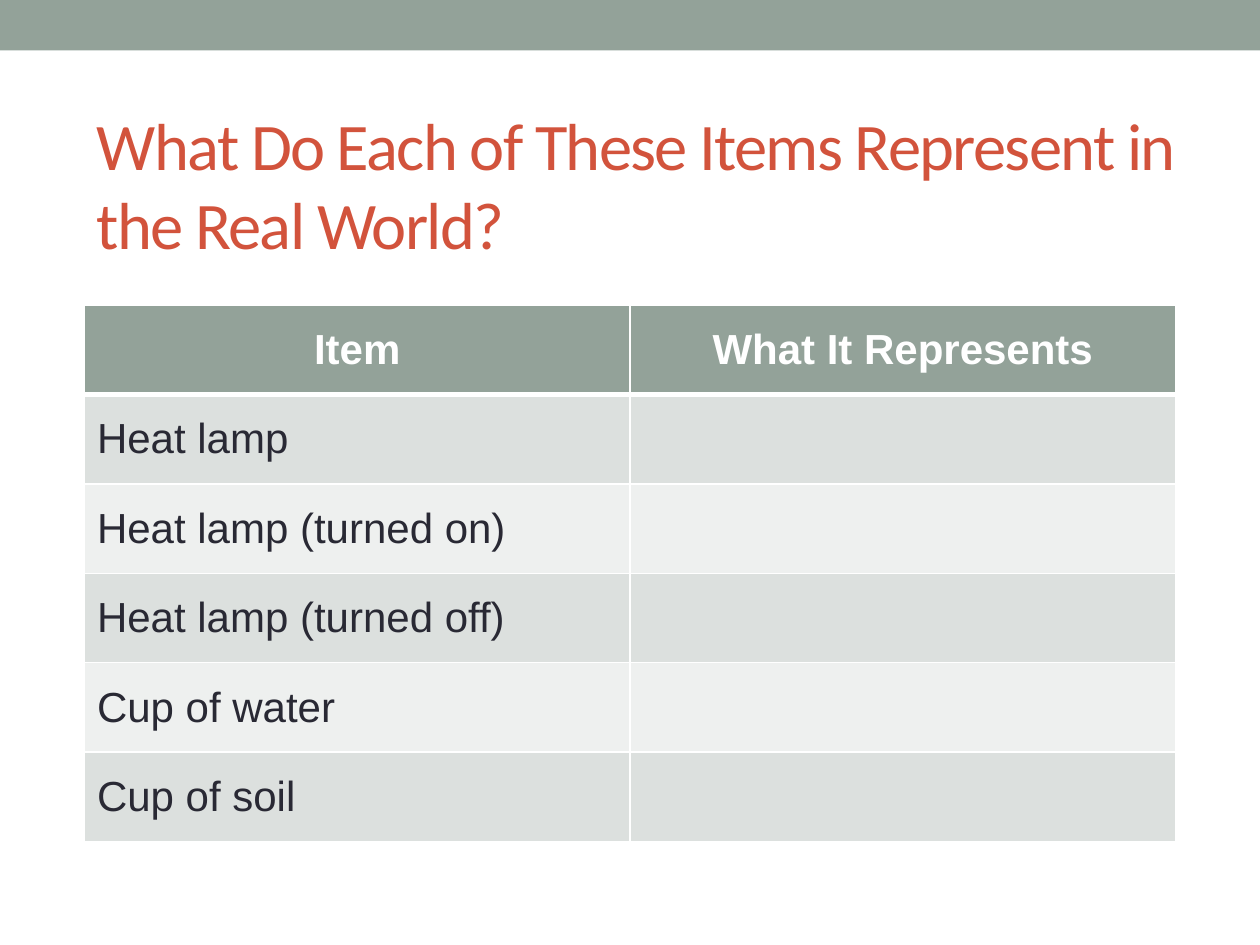
from lxml import etree
from pptx import Presentation
from pptx.dml.color import RGBColor
from pptx.enum.shapes import MSO_SHAPE
from pptx.enum.text import MSO_ANCHOR, PP_ALIGN
from pptx.oxml.ns import qn
from pptx.util import Inches, Pt

RECTANGLE = MSO_SHAPE.RECTANGLE
MIDDLE = MSO_ANCHOR.MIDDLE
LEFT, CENTER = PP_ALIGN.LEFT, PP_ALIGN.CENTER

SAGE, RUST, INK, WHITE = "93A299", "D2533C", "292934", "FFFFFF"
BANDS = ("DCE0DE", "EEF0EF")
MARGIN = 0.67
COLUMN_WIDTH, ROW_HEIGHT = 4.33, 0.71
ROWS = [
    ("Item", "What It Represents"),
    ("Heat lamp", ""),
    ("Heat lamp (turned on)", ""),
    ("Heat lamp (turned off)", ""),
    ("Cup of water", ""),
    ("Cup of soil", ""),
]


def color(hex_value):
    return RGBColor.from_string(hex_value)


def fill_solid(target, hex_value):
    target.fill.solid()
    target.fill.fore_color.rgb = color(hex_value)


def style_font(font, name, size, hex_value, bold=False):
    font.name = name
    font.size = Pt(size)
    font.bold = bold
    font.color.rgb = color(hex_value)


def add_top_band(slide, width):
    band = slide.shapes.add_shape(RECTANGLE, 0, 0, width, Inches(0.4))
    band.shadow.inherit = False
    fill_solid(band, SAGE)
    band.line.fill.background()


def add_title(slide, text):
    box = slide.shapes.add_textbox(
        Inches(MARGIN), Inches(0.83), Inches(8.83), Inches(1.25))
    frame = box.text_frame
    frame.word_wrap = True
    frame.vertical_anchor = MIDDLE
    frame.text = text
    run = frame.paragraphs[0].runs[0]
    style_font(run.font, "Calibri", 38, RUST)
    run.font._element.set("spc", "-100")


def set_borders(cell, **widths):
    """Draw white cell borders; widths are points keyed by side L, R, T, B."""
    properties = cell._tc.get_or_add_tcPr()
    for position, side in enumerate("LRTB"):
        line = etree.Element(qn(f"a:ln{side}"), w=str(Pt(widths.get(side, 1))))
        solid = etree.SubElement(line, qn("a:solidFill"))
        etree.SubElement(solid, qn("a:srgbClr"), val=WHITE)
        properties.insert(position, line)


def style_cell(cell, text, row):
    header = row == 0
    cell.text = text
    cell.vertical_anchor = MIDDLE
    fill_solid(cell, SAGE if header else BANDS[(row - 1) % 2])
    set_borders(cell, T=3 if row == 1 else 1, B=3 if header else 1)
    paragraph = cell.text_frame.paragraphs[0]
    paragraph.alignment = CENTER if header else LEFT
    style_font(paragraph.font, "Arial", 24, WHITE if header else INK, header)
    for run in paragraph.runs:
        style_font(run.font, "Arial", 24, WHITE if header else INK, header)


def add_item_table(slide, rows):
    column_count = len(rows[0])
    table = slide.shapes.add_table(
        len(rows), column_count, Inches(MARGIN), Inches(2.42),
        Inches(COLUMN_WIDTH * column_count),
        Inches(ROW_HEIGHT * len(rows))).table
    for row, texts in enumerate(rows):
        for column, text in enumerate(texts):
            style_cell(table.cell(row, column), text, row)


def main():
    presentation = Presentation()
    presentation.slide_width = Inches(10)
    presentation.slide_height = Inches(7.5)
    slide = presentation.slides.add_slide(presentation.slide_layouts[6])
    fill_solid(slide.background, WHITE)
    add_top_band(slide, presentation.slide_width)
    add_title(slide, "What Do Each of These Items Represent in the Real World?")
    add_item_table(slide, ROWS)
    presentation.save("out.pptx")


if __name__ == "__main__":
    main()
